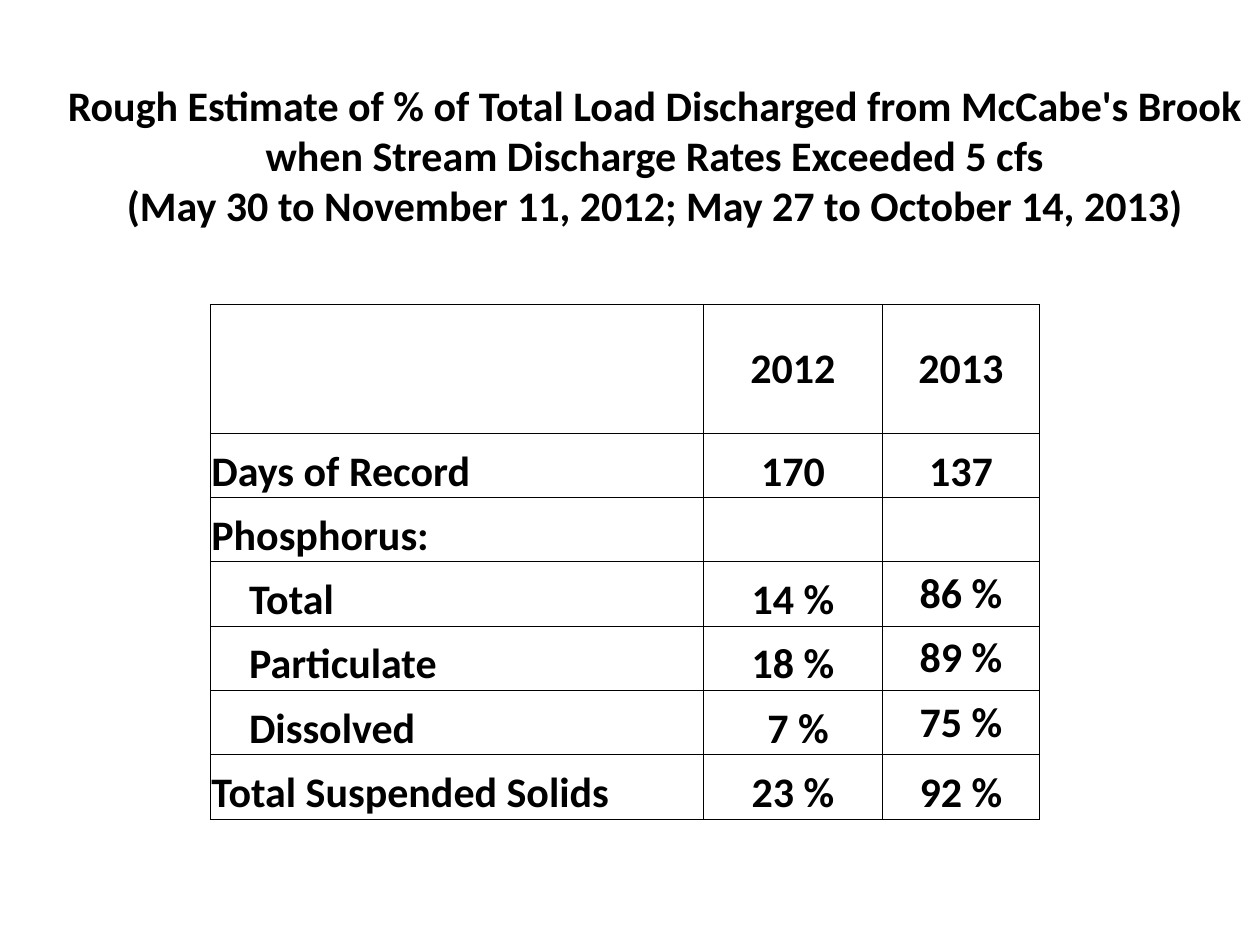
from lxml import etree
from pptx import Presentation
from pptx.dml.color import RGBColor
from pptx.enum.text import MSO_ANCHOR, MSO_AUTO_SIZE, PP_ALIGN
from pptx.oxml.ns import qn
from pptx.util import Cm, Pt

LEFT, CENTER = PP_ALIGN.LEFT, PP_ALIGN.CENTER
MIDDLE, BOTTOM = MSO_ANCHOR.MIDDLE, MSO_ANCHOR.BOTTOM
GROW = MSO_AUTO_SIZE.SHAPE_TO_FIT_TEXT
BLACK = "000000"
INSET, INDENT, DIGIT_PAD = 0.02, 0.76, 0.2

TITLE = [
    "Rough Estimate of % of Total Load Discharged from McCabe's Brook",
    "when Stream Discharge Rates Exceeded 5 cfs",
    "(May 30 to November 11, 2012; May 27 to October 14, 2013)",
]
COLUMN_SHARES = [3.92, 1.42, 1.25]
ROW_SHARES = [2, 1, 1, 1, 1, 1, 1]
ROWS = [
    ("", "2012", "2013"),
    ("Days of Record", "170", "137"),
    ("Phosphorus:", "", ""),
    ("Total", "14 %", "86 %"),
    ("Particulate", "18 %", "89 %"),
    ("Dissolved", "7 %", "75 %"),
    ("Total Suspended Solids", "23 %", "92 %"),
]
FRACTIONS = {"Total", "Particulate", "Dissolved"}


def color(value):
    """Turn a hex string into a colour."""
    return RGBColor.from_string(value)


def style(p, align):
    """Apply the slide's bold text style to a paragraph."""
    p.alignment = align
    p.font.name = "Calibri"
    p.font.size = Pt(24)
    p.font.bold = True
    p.font.color.rgb = color(BLACK)


def add_borders(cell):
    """Draw a thin line on each side of a cell."""
    tc_pr = cell._tc.get_or_add_tcPr()
    for side in ("lnL", "lnR", "lnT", "lnB"):
        ln = etree.SubElement(tc_pr, qn(f"a:{side}"), w=str(Pt(0.5)))
        fill = etree.SubElement(ln, qn("a:solidFill"))
        etree.SubElement(fill, qn("a:srgbClr"), val=BLACK)


def add_title(s, x, y, w, h):
    """Place the centred three-line title."""
    tf = s.shapes.add_textbox(Cm(x), Cm(y), Cm(w), Cm(h)).text_frame
    tf.word_wrap = False
    tf.auto_size = GROW
    for i, line in enumerate(TITLE):
        p = tf.add_paragraph() if i else tf.paragraphs[0]
        p.text = line
        style(p, CENTER)


def fill_cell(cell, text, align, anchor, pad):
    """Write one table cell with its borders, insets and alignment."""
    add_borders(cell)
    cell.fill.background()
    cell.margin_left = Cm(INSET + pad)
    cell.margin_right = cell.margin_top = Cm(INSET)
    cell.margin_bottom = 0
    cell.vertical_anchor = anchor
    p = cell.text_frame.paragraphs[0]
    p.text = text
    style(p, align)


def add_load_table(s, x, y, w, h):
    """Place the table of load shares by year."""
    frame = s.shapes.add_table(len(ROWS), len(COLUMN_SHARES), Cm(x), Cm(y), Cm(w), Cm(h))
    table = frame.table
    table.first_row = table.horz_banding = False
    for column, share in zip(table.columns, COLUMN_SHARES):
        column.width = Cm(w * share / sum(COLUMN_SHARES))
    for row, share in zip(table.rows, ROW_SHARES):
        row.height = Cm(h * share / sum(ROW_SHARES))
    for i, values in enumerate(ROWS):
        is_fraction = values[0] in FRACTIONS
        for j, text in enumerate(values):
            raised = i == 0 or (is_fraction and j == 2)
            pad = 0
            if is_fraction and j == 0:
                pad = INDENT
            elif text == "7 %":
                pad = DIGIT_PAD
            fill_cell(table.cell(i, j), text, CENTER if j else LEFT,
                      MIDDLE if raised else BOTTOM, pad)


def main():
    """Build and save the slide."""
    prs = Presentation()
    prs.slide_width, prs.slide_height = Cm(25.4), Cm(19.05)
    s = prs.slides.add_slide(prs.slide_layouts[6])
    add_title(s, 1, 1.47, 24.4, 3.33)
    add_load_table(s, 4.24, 6.14, 16.72, 10.37)
    prs.save("out.pptx")


if __name__ == "__main__":
    main()
